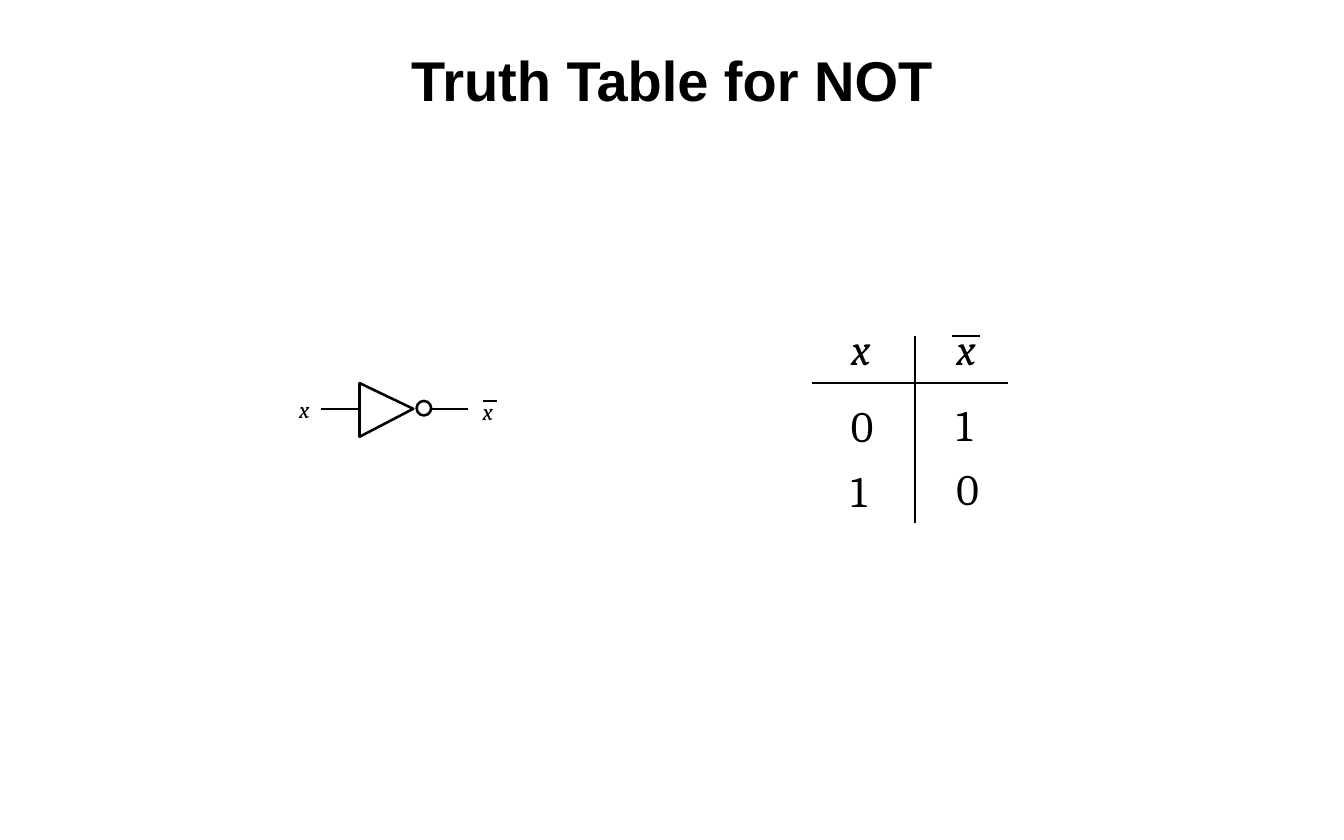
"""Build a slide with the NOT gate symbol and its truth table."""
from dataclasses import dataclass

from lxml import etree
from pptx import Presentation
from pptx.dml.color import RGBColor
from pptx.enum.shapes import MSO_CONNECTOR, MSO_SHAPE
from pptx.enum.text import MSO_ANCHOR, MSO_AUTO_SIZE, PP_ALIGN
from pptx.oxml.ns import qn
from pptx.util import Emu, Inches, Pt

STRAIGHT = MSO_CONNECTOR.STRAIGHT
OVAL = MSO_SHAPE.OVAL
CENTER = PP_ALIGN.CENTER
MIDDLE = MSO_ANCHOR.MIDDLE
FIT_SHAPE = MSO_AUTO_SIZE.SHAPE_TO_FIT_TEXT
NO_SIZING = MSO_AUTO_SIZE.NONE
TITLE_ONLY = 5

COLORS = {"ink": "000000", "paper": "FFFFFF"}
INK = RGBColor.from_string(COLORS["ink"])
GATE_WEIGHT, RULE_WEIGHT, BAR_WEIGHT = 1.63, 0.75, 1.25
COLUMNS, ROWS = 12, 7.5
WIDTH, HEIGHT = Inches(12), Inches(7.5)


@dataclass(frozen=True)
class Label:
    """A symbol in a box placed by grid column and row."""
    text: str
    column: float
    row: float
    wide: float
    high: float
    size: float
    inset: bool = True


@dataclass(frozen=True)
class Stroke:
    """A straight line between two grid points."""
    start: tuple[float, float]
    end: tuple[float, float]
    weight: float


def across(columns: float) -> Emu:
    """Turn grid columns into a length."""
    return Emu(round(WIDTH * columns / COLUMNS))


def down(rows: float) -> Emu:
    """Turn grid rows into a length."""
    return Emu(round(HEIGHT * rows / ROWS))


def add_span(para, text: str, font: str, size: float, bold: bool = False, italic: bool = False) -> None:
    """Add one formatted run to a paragraph."""
    span = para.add_run()
    span.text = text
    span.font.name, span.font.size = font, Pt(size)
    span.font.bold, span.font.italic = bold, italic
    span.font.color.rgb = INK


def add_title(page, text: str) -> None:
    """Place and fill the title placeholder."""
    title = page.shapes.title
    title.left, title.top = across(1), down(0.33)
    title.width, title.height = across(10), down(0.75)
    frame = title.text_frame
    frame.auto_size, frame.vertical_anchor = NO_SIZING, MIDDLE
    para = frame.paragraphs[0]
    para.alignment = CENTER
    add_span(para, text, "Arial", 36, bold=True)


def add_label(page, label: Label) -> None:
    """Draw a symbol, with letters in italics."""
    box = page.shapes.add_textbox(across(label.column), down(label.row), across(label.wide), down(label.high))
    frame = box.text_frame
    frame.word_wrap, frame.auto_size = False, FIT_SHAPE
    if not label.inset:
        frame.margin_left = frame.margin_right = frame.margin_top = frame.margin_bottom = 0
    add_span(frame.paragraphs[0], label.text, "Cambria", label.size, italic=label.text.isalpha())


def add_stroke(page, stroke: Stroke) -> None:
    """Draw a plain straight line."""
    (left, top), (right, bottom) = stroke.start, stroke.end
    line = page.shapes.add_connector(STRAIGHT, across(left), down(top), across(right), down(bottom))
    line.line.color.rgb, line.line.width = INK, Pt(stroke.weight)
    etree.SubElement(line._element.spPr, qn("a:effectLst"))


def outline(shape) -> None:
    """Give a gate part an ink outline and no fill."""
    shape.shadow.inherit = False
    shape.fill.background()
    shape.line.color.rgb, shape.line.width = INK, Pt(GATE_WEIGHT)


def add_gate(page) -> None:
    """Draw the inverter with its wires and labels."""
    left, axis, tip = 3.21, 3.65, 3.69
    builder = page.shapes.build_freeform(across(tip), down(axis))
    builder.add_line_segments([(across(left), down(3.9)), (across(left), down(3.42))], close=True)
    outline(builder.convert_to_shape())
    outline(page.shapes.add_shape(OVAL, across(3.72), down(3.58), across(0.13), down(0.13)))
    for start, end in (((2.87, axis), (left, axis)), ((3.85, axis), (4.18, axis)), ((4.31, 3.58), (4.44, 3.58))):
        add_stroke(page, Stroke(start, end, GATE_WEIGHT))
    for column, row in ((2.67, 3.53), (4.31, 3.55)):
        add_label(page, Label("x", column, row, 0.16, 0.25, 15, inset=False))


def add_truth_table(page) -> None:
    """Draw the ruled truth table."""
    for stroke in (
        Stroke((8.17, 3), (8.17, 4.67), RULE_WEIGHT),
        Stroke((7.25, 3.42), (9, 3.42), RULE_WEIGHT),
        Stroke((8.5, 3), (8.75, 3), BAR_WEIGHT),
    ):
        add_stroke(page, stroke)
    for column, tops, symbols in ((7.5, (2.83, 3.51, 4.09), "x01"), (8.44, (2.83, 3.5, 4.08), "x10")):
        for top, symbol in zip(tops, symbols):
            wide = 0.38 if symbol.isalpha() else 0.4
            add_label(page, Label(symbol, column, top, wide, 0.57, 28))


def main() -> None:
    """Assemble and save the deck."""
    deck = Presentation()
    deck.slide_width, deck.slide_height = WIDTH, HEIGHT
    page = deck.slides.add_slide(deck.slide_layouts[TITLE_ONLY])
    page.background.fill.solid()
    page.background.fill.fore_color.rgb = RGBColor.from_string(COLORS["paper"])
    add_title(page, "Truth Table for NOT")
    add_gate(page)
    add_truth_table(page)
    deck.save("out.pptx")


if __name__ == "__main__":
    main()
